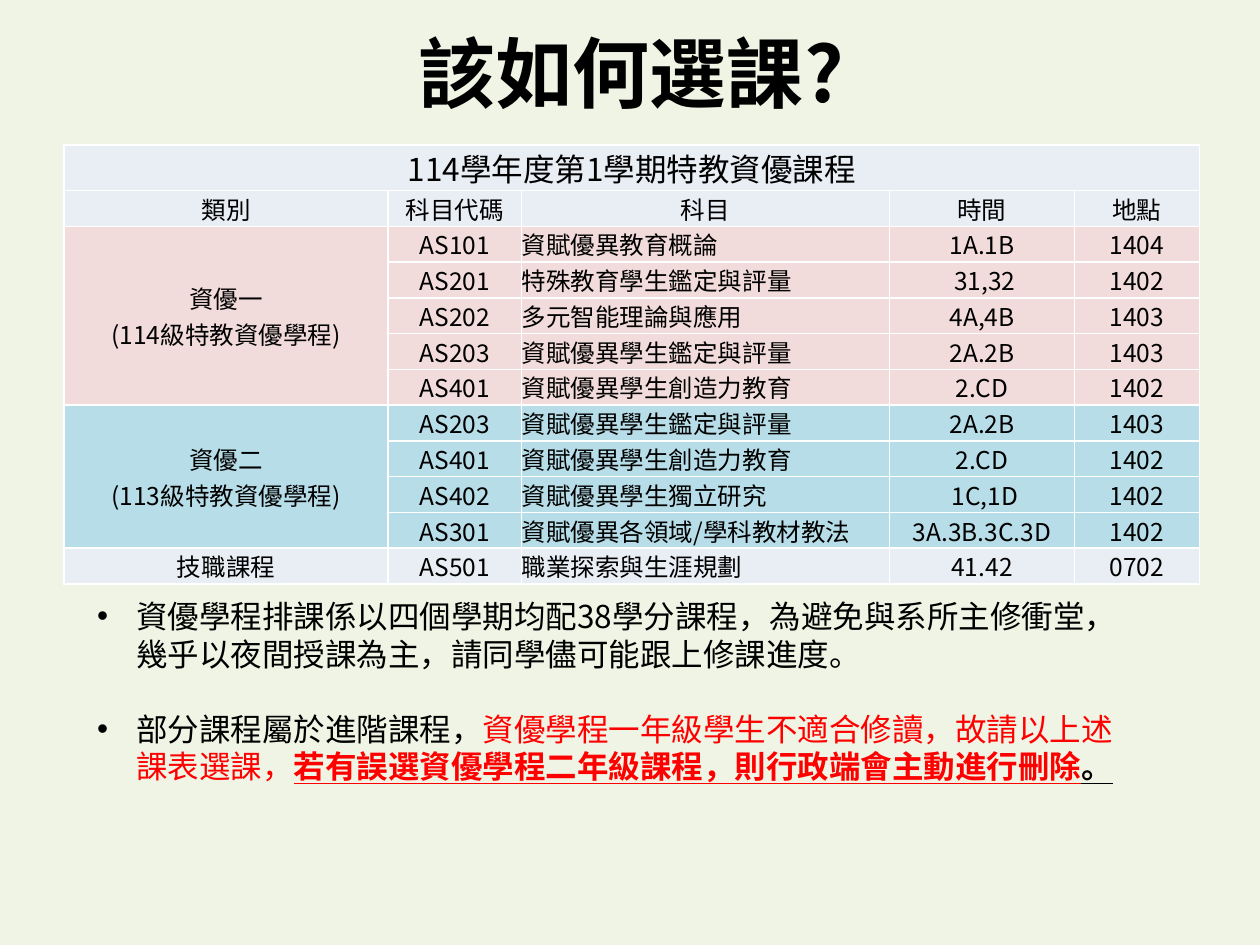
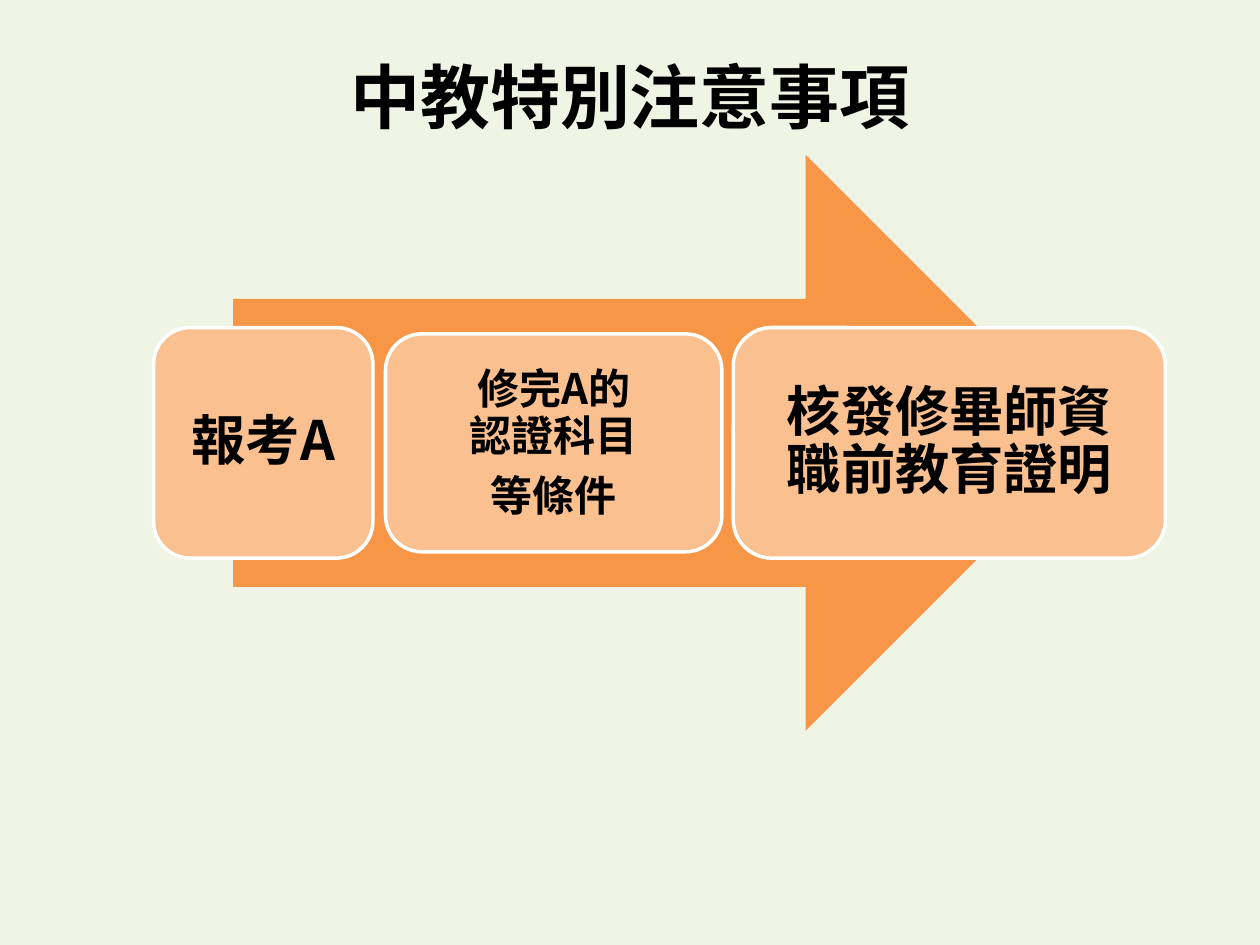
from dataclasses import dataclass

from lxml.etree import SubElement
from pptx import Presentation
from pptx.dml.color import RGBColor
from pptx.enum.shapes import MSO_SHAPE
from pptx.enum.text import MSO_ANCHOR, MSO_AUTO_SIZE, PP_ALIGN
from pptx.oxml.ns import qn
from pptx.util import Inches, Pt

FONT = "Noto Sans CJK SC"
COLORS = {
    "background": "EFF4E5",
    "text": "000000",
    "warning": "FF0000",
    "border": "FFFFFF",
    "neutral": "E9EDF4",
    "first_year": "F2DCDB",
    "second_year": "B7DEE8",
    "arrow": "F79646",
    "step": "FAC090",
}


@dataclass(frozen=True)
class Span:
    """A stretch of text with one look."""

    text: str
    color: str = "text"
    bold: bool = False
    underline: bool = False


@dataclass(frozen=True)
class CourseGroup:
    """A category of courses that shares one merged label and one fill."""

    label: str
    fill: str
    courses: tuple[tuple[str, str, str, str], ...]


@dataclass(frozen=True)
class Step:
    """A rounded box on the process arrow."""

    left: float
    top: float
    width: float
    height: float
    margin: float
    size: int
    leading: int
    paragraphs: tuple[str, ...]


TABLE_TITLE = "114學年度第1學期特教資優課程"
HEADINGS = ("類別", "科目代碼", "科目", "時間", "地點")
COLUMN_WIDTHS = (2.57, 1.06, 2.92, 1.47, 0.99)
ROW_HEIGHT = 0.27
SHORT_ROW, SHORT_ROW_HEIGHT = 2, 0.22
SUBJECT_COLUMN = 2
GROUPS = (
    CourseGroup("資優一\n(114級特教資優學程)", "first_year", (
        ("AS101", "資賦優異教育概論", "1A.1B", "1404"),
        ("AS201", "特殊教育學生鑑定與評量", " 31,32", "1402"),
        ("AS202", "多元智能理論與應用", "4A,4B", "1403"),
        ("AS203", "資賦優異學生鑑定與評量", "2A.2B", "1403"),
        ("AS401", "資賦優異學生創造力教育", "2.CD", "1402"),
    )),
    CourseGroup("資優二\n(113級特教資優學程)", "second_year", (
        ("AS203", "資賦優異學生鑑定與評量", "2A.2B", "1403"),
        ("AS401", "資賦優異學生創造力教育", "2.CD", "1402"),
        ("AS402", "資賦優異學生獨立研究", " 1C,1D", "1402"),
        ("AS301", "資賦優異各領域/學科教材教法", "3A.3B.3C.3D", "1402"),
    )),
    CourseGroup("技職課程", "neutral", (
        ("AS501", "職業探索與生涯規劃", "41.42", "0702"),
    )),
)
NOTES = (
    (Span("資優學程排課係以四個學期均配38學分課程，為避免與系所主修衝堂，"
          "幾乎以夜間授課為主，請同學儘可能跟上修課進度。"),),
    (
        Span("部分課程屬於進階課程，"),
        Span("資優學程一年級學生不適合修讀，故請以上述課表選課，", "warning"),
        Span("若有誤選資優學程二年級課程，則行政端會主動進行刪除", "warning", True, True),
        Span("。", "text", True, True),
    ),
)
STEPS = (
    Step(1.22, 2.6, 1.74, 1.83, 0.13, 31, 33, ("報考A",)),
    Step(3.06, 2.65, 2.67, 1.73, 0.1, 24, 27, ("修完A的\n認證科目", "等條件")),
    Step(5.82, 2.6, 3.43, 1.83, 0.13, 31, 33, ("核發修畢師資職前教育證明",)),
)


def rgb(name: str) -> RGBColor:
    """Look up a named colour."""
    return RGBColor.from_string(COLORS[name])


def add_span(para, span: Span, size: int) -> None:
    """Append a formatted span, turning newlines into line breaks."""
    for index, line in enumerate(span.text.split("\n")):
        if index:
            para.add_line_break()
        run = para.add_run()
        run.text = line
        font = run.font
        font.name, font.size = FONT, Pt(size)
        font.bold, font.underline = span.bold, span.underline
        font.color.rgb = rgb(span.color)
        SubElement(run._r.get_or_add_rPr(), qn("a:ea"), typeface=FONT)


def next_paragraph(frame, index: int, leading: float, gap: float):
    """Return paragraph number index with exact leading and a gap above it."""
    para = frame.add_paragraph() if index else frame.paragraphs[0]
    para.line_spacing = Pt(leading)
    para.space_before = Pt(gap if index else 0)
    return para


def set_margins(target, margin: float) -> None:
    """Give a cell or text frame the same margin on all sides."""
    for side in ("left", "top", "right", "bottom"):
        setattr(target, f"margin_{side}", Inches(margin))


def place(shape, left: float, top: float, width: float, height: float) -> None:
    """Move and size a shape."""
    shape.left, shape.top = Inches(left), Inches(top)
    shape.width, shape.height = Inches(width), Inches(height)


def set_title(page, text: str, size: int, left: float, top: float, height: float) -> None:
    """Fill the title placeholder in the shared title style."""
    title = page.shapes.title
    place(title, left, top, 9, height)
    frame = title.text_frame
    frame.auto_size = MSO_AUTO_SIZE.NONE
    frame.vertical_anchor = MSO_ANCHOR.MIDDLE
    para = frame.paragraphs[0]
    para.alignment = PP_ALIGN.CENTER
    add_span(para, Span(text, bold=True), size)


def fill_cell(cell, text: str, fill: str, size: int = 14, align=PP_ALIGN.CENTER) -> None:
    """Write and centre a cell's text and give it its fill."""
    set_margins(cell, 0)
    cell.vertical_anchor = MSO_ANCHOR.MIDDLE
    para = cell.text_frame.paragraphs[0]
    para.alignment = align
    add_span(para, Span(text), size)
    paint_cell(cell, fill)


def paint_cell(cell, fill: str) -> None:
    """Set a cell's white borders and its fill."""
    properties = cell._tc.get_or_add_tcPr()
    for side in ("lnL", "lnR", "lnT", "lnB"):
        line = SubElement(properties, qn(f"a:{side}"), w=str(Pt(1)))
        solid = SubElement(line, qn("a:solidFill"))
        SubElement(solid, qn("a:srgbClr"), val=COLORS["border"])
    cell.fill.solid()
    cell.fill.fore_color.rgb = rgb(fill)


def add_course_table(page) -> None:
    """Draw the course table from its groups."""
    row_count = 2 + sum(len(group.courses) for group in GROUPS)
    holder = page.shapes.add_table(
        row_count, len(HEADINGS), Inches(0.51), Inches(1.15), Inches(9), Inches(3.27))
    table = holder.table
    for column, width in zip(table.columns, COLUMN_WIDTHS):
        column.width = Inches(width)
    for index, row in enumerate(table.rows):
        row.height = Inches(SHORT_ROW_HEIGHT if index == SHORT_ROW else ROW_HEIGHT)
    holder.height = Inches(3.27)

    table.cell(0, 0).merge(table.cell(0, len(HEADINGS) - 1))
    fill_cell(table.cell(0, 0), TABLE_TITLE, "neutral", 18)
    for column, heading in enumerate(HEADINGS):
        if column:
            paint_cell(table.cell(0, column), "neutral")
        fill_cell(table.cell(1, column), heading, "neutral")
    top = 2
    for group in GROUPS:
        bottom = top + len(group.courses) - 1
        if bottom > top:
            table.cell(top, 0).merge(table.cell(bottom, 0))
        fill_cell(table.cell(top, 0), group.label, group.fill)
        for row, course in enumerate(group.courses, top):
            if row > top:
                paint_cell(table.cell(row, 0), group.fill)
            for column, text in enumerate(course, 1):
                align = PP_ALIGN.LEFT if column == SUBJECT_COLUMN else PP_ALIGN.CENTER
                fill_cell(table.cell(row, column), text, group.fill, align=align)
        top = bottom + 1


def add_notes_list(page) -> None:
    """Fill the body placeholder with the bulleted advice."""
    body = page.placeholders[1]
    place(body, 0.67, 4.69, 8.35, 1.92)
    frame = body.text_frame
    frame.auto_size = MSO_AUTO_SIZE.NONE
    for index, spans in enumerate(NOTES):
        para = next_paragraph(frame, index, 21.5, 21.5)
        properties = para._p.get_or_add_pPr()
        properties.set("marL", str(Inches(0.31)))
        properties.set("indent", str(-Inches(0.31)))
        for span in spans:
            add_span(para, span, 18)


def add_filled_shape(page, kind, fill: str, *bounds: float):
    """Add a flat preset shape without an outline."""
    shape = page.shapes.add_shape(kind, *map(Inches, bounds))
    shape.shadow.inherit = False
    shape.fill.solid()
    shape.fill.fore_color.rgb = rgb(fill)
    shape.line.fill.background()
    return shape


def add_step(page, step: Step) -> None:
    """Draw one rounded step with its centred bold text."""
    box = add_filled_shape(page, MSO_SHAPE.ROUNDED_RECTANGLE, "step",
                           step.left, step.top, step.width, step.height)
    box.line.color.rgb = rgb("border")
    box.line.width = Pt(2)
    frame = box.text_frame
    frame.word_wrap = True
    frame.vertical_anchor = MSO_ANCHOR.MIDDLE
    set_margins(frame, step.margin)
    for index, text in enumerate(step.paragraphs):
        para = next_paragraph(frame, index, step.leading, 7.5)
        para.alignment = PP_ALIGN.CENTER
        add_span(para, Span(text, bold=True), step.size)


def build_course_page(deck) -> None:
    """Build the course selection slide."""
    page = deck.slides.add_slide(deck.slide_layouts[1])
    set_title(page, "該如何選課?", 44, 0.51, -0.01, 1.16)
    add_notes_list(page)
    add_course_table(page)


def build_process_page(deck) -> None:
    """Build the slide with the steps towards the certificate."""
    page = deck.slides.add_slide(deck.slide_layouts[5])
    set_title(page, "中教特別注意事項", 40, 0.5, 0.13, 1.25)
    add_filled_shape(page, MSO_SHAPE.RIGHT_ARROW, "arrow", 1.85, 1.23, 6.83, 4.57)
    for step in STEPS:
        add_step(page, step)


def main() -> None:
    """Build and save the deck."""
    deck = Presentation()
    deck.slide_width, deck.slide_height = Inches(10), Inches(7.5)
    background = deck.slide_master.background.fill
    background.solid()
    background.fore_color.rgb = rgb("background")
    build_course_page(deck)
    build_process_page(deck)
    deck.save("out.pptx")


if __name__ == "__main__":
    main()
